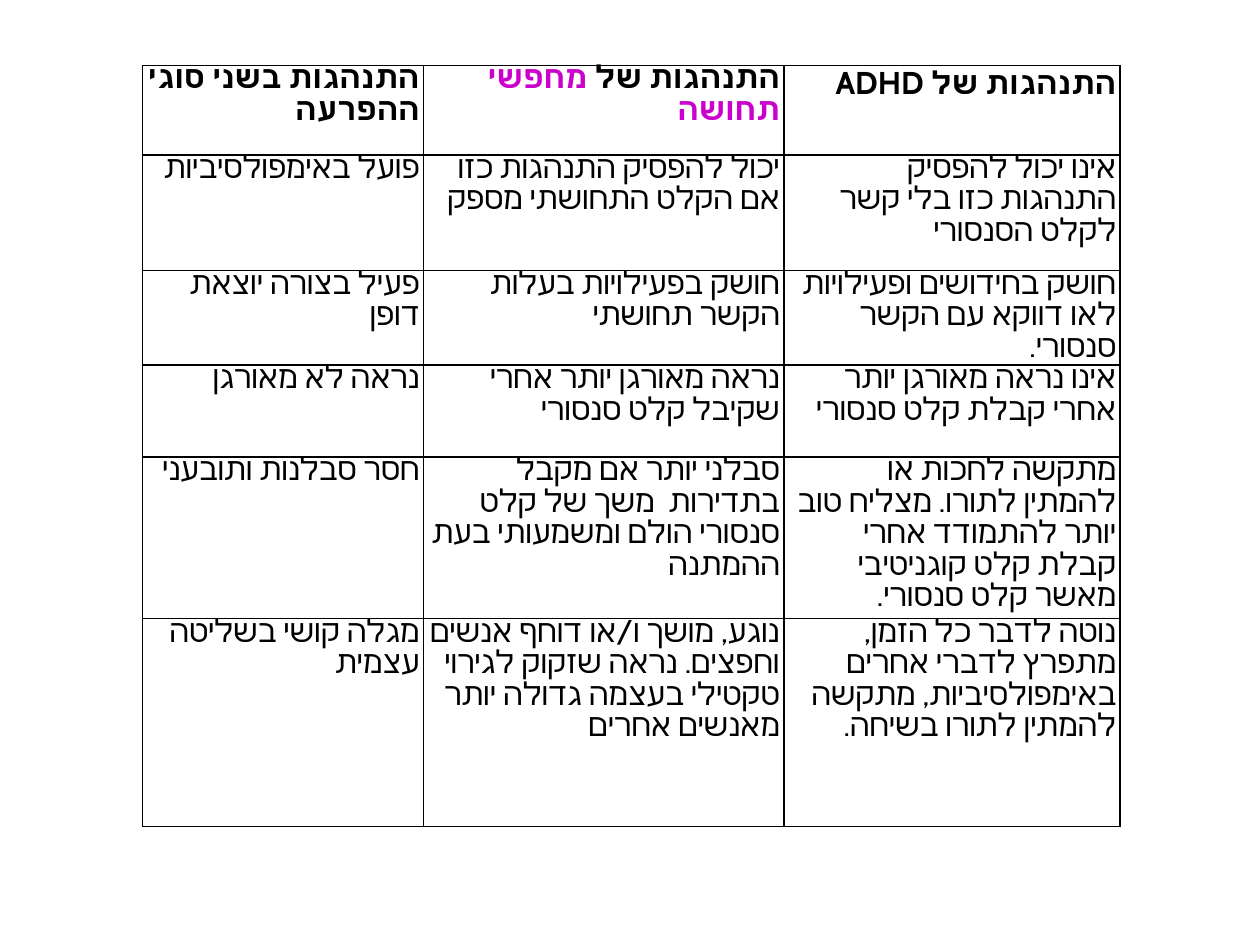
from lxml import etree
from pptx import Presentation
from pptx.dml.color import RGBColor
from pptx.enum.text import PP_ALIGN
from pptx.oxml.ns import qn
from pptx.util import Pt

RIGHT = PP_ALIGN.RIGHT
FONT, SIZE = "Cabin", 18
HUES = {"ink": "000000", "seek": "CC00CC"}

# Content: the header holds (text, colour) runs, the rest is plain text
HEAD = [
    [("התנהגות בשני סוגי ההפרעה", "ink")],
    [("התנהגות של ", "ink"), ("מחפשי תחושה", "seek")],
    [("התנהגות של ADHD", "ink")],
]
BODY = [
    ("פועל באימפולסיביות",
     "יכול להפסיק התנהגות כזו אם הקלט התחושתי מספק",
     "אינו יכול להפסיק התנהגות כזו בלי קשר לקלט הסנסורי"),
    ("פעיל בצורה יוצאת דופן",
     "חושק בפעילויות בעלות הקשר תחושתי",
     "חושק בחידושים ופעילויות לאו דווקא עם הקשר סנסורי."),
    ("נראה לא מאורגן",
     "נראה מאורגן יותר אחרי שקיבל קלט סנסורי",
     "אינו נראה מאורגן יותר אחרי קבלת קלט סנסורי"),
    ("חסר סבלנות ותובעני",
     "סבלני יותר אם מקבל בתדירות  משך של קלט סנסורי הולם ומשמעותי בעת ההמתנה",
     "מתקשה לחכות או להמתין לתורו. מצליח טוב יותר להתמודד אחרי קבלת קלט "
     "קוגניטיבי מאשר קלט סנסורי."),
    ("מגלה קושי בשליטה עצמית",
     "נוגע, מושך ו/או דוחף אנשים וחפצים. נראה שזקוק לגירוי טקטילי בעצמה "
     "גדולה יותר מאנשים אחרים",
     "נוטה לדבר כל הזמן, מתפרץ לדברי אחרים באימפולסיביות, מתקשה להמתין "
     "לתורו בשיחה."),
]
ROWS = [HEAD] + [[[(text, "ink")] for text in row] for row in BODY]

# Layout
LEFT, TOP = 81.4, 37.4
WIDE = [160.6, 205.9, 192.2]
HIGH = [51.1, 66.2, 52.6, 52.6, 92.2, 118.8]
PAD = 2.2
DROP = 3.4  # the Latin heading sits a little lower


def edge(cell):
    """Draw a thin line on all four sides."""
    props = cell._tc.get_or_add_tcPr()
    for i, side in enumerate(("lnL", "lnR", "lnT", "lnB")):
        line = etree.Element(qn("a:" + side), w=str(Pt(1)))
        fill = etree.SubElement(line, qn("a:solidFill"))
        etree.SubElement(fill, qn("a:srgbClr"), val=HUES["ink"])
        props.insert(i, line)


def write(cell, parts, bold):
    """Fill a cell with right-to-left runs."""
    para = cell.text_frame.paragraphs[0]
    para.alignment = RIGHT
    para.line_spacing = Pt(SIZE)
    para._p.get_or_add_pPr().set("rtl", "1")
    for text, hue in parts:
        run = para.add_run()
        run.text = text
        font = run.font
        font.name, font.size, font.bold = FONT, Pt(SIZE), bold
        font.color.rgb = RGBColor.from_string(HUES[hue])
        etree.SubElement(run._r.get_or_add_rPr(), qn("a:cs"), typeface=FONT)


# Slide
deck = Presentation()
deck.slide_width, deck.slide_height = Pt(720), Pt(540)
slide = deck.slides.add_slide(deck.slide_layouts[6])

# Table
table = slide.shapes.add_table(
    len(ROWS), len(WIDE), Pt(LEFT), Pt(TOP), Pt(sum(WIDE)), Pt(sum(HIGH))
).table
table.horz_banding = False
for col, wide in zip(table.columns, WIDE):
    col.width = Pt(wide)
for row, high in zip(table.rows, HIGH):
    row.height = Pt(high)

# Cells
for r, row in enumerate(ROWS):
    for c, parts in enumerate(row):
        cell = table.cell(r, c)
        cell.margin_left = cell.margin_right = Pt(PAD)
        cell.margin_top = cell.margin_bottom = Pt(0)
        cell.fill.background()
        edge(cell)
        write(cell, parts, r == 0)
table.cell(0, 2).margin_top = Pt(DROP)

deck.save("out.pptx")
